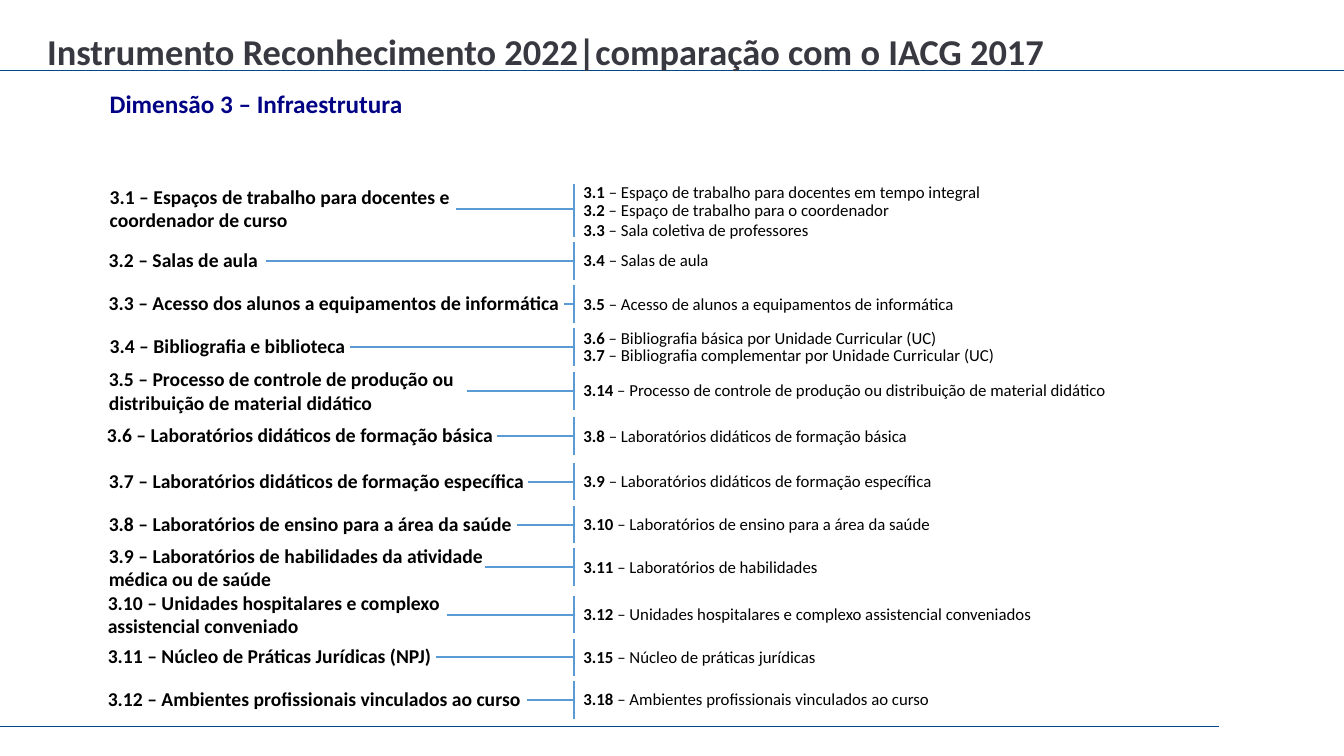
import pptx
import pptx.dml.color
import pptx.enum.shapes
import pptx.enum.text
import pptx.oxml
import pptx.util
from pptx.util import Pt

TITLE = "Instrumento Reconhecimento 2022|comparação com o IACG 2017"
DIMENSION = "Dimensão 3 – Infraestrutura"

# Row: centre y, label x, label width, label lines, stem start x, label,
# then the matching 2017 indicators as (number, name, width)
ROWS = [
    (149, 71.3, 291, 2, 325.4, "3.1 – Espaços de trabalho para docentes e coordenador de curso",
     [("3.1", "Espaço de trabalho para docentes em tempo integral", 301),
      ("3.2", "Espaço de trabalho para o coordenador", 238),
      ("3.3", "Sala coletiva de professores", 180)]),
    (186.4, 70.6, 336.2, 1, 190, "3.2 – Salas de aula",
     [("3.4", "Salas de aula", 294.5)]),
    (217.3, 70.6, 336.2, 1, 403.2, "3.3 – Acesso dos alunos a equipamentos de informática",
     [("3.5", "Acesso de alunos a equipamentos de informática", 294.5)]),
    (247.8, 71.3, 186, 1, 249.8, "3.4 – Bibliografia e biblioteca",
     [("3.6", "Bibliografia básica por Unidade Curricular (UC)", 271),
      ("3.7", "Bibliografia complementar por Unidade Curricular (UC)", 313)]),
    (279.4, 70.6, 315.4, 2, 333.4,
     "3.5 – Processo de controle de produção ou distribuição de material didático",
     [("3.14", "Processo de controle de produção ou distribuição de material didático", 460)]),
    (311.6, 69.3, 294, 1, 355, "3.6 – Laboratórios didáticos de formação básica",
     [("3.8", "Laboratórios didáticos de formação básica", 293.8)]),
    (344, 70.6, 315, 1, 377.3, "3.7 – Laboratórios didáticos de formação específica",
     [("3.9", "Laboratórios didáticos de formação específica", 265)]),
    (374.7, 70.6, 311.5, 1, 369.4, "3.8 – Laboratórios de ensino para a área da saúde",
     [("3.10", "Laboratórios de ensino para a área da saúde", 265)]),
    (405.2, 70.6, 314, 2, 346.3,
     "3.9 – Laboratórios de habilidades da atividade médica ou de saúde",
     [("3.11", "Laboratórios de habilidades", 265)]),
    (439, 69.9, 313.2, 2, 319,
     "3.10 – Unidades hospitalares e complexo assistencial conveniado",
     [("3.12", "Unidades hospitalares e complexo assistencial conveniados", 356.4)]),
    (469.5, 69.9, 250, 1, 311.8, "3.11 – Núcleo de Práticas Jurídicas (NPJ)",
     [("3.15", "Núcleo de práticas jurídicas", 265)]),
    (500, 69.9, 314, 1, 376.6, "3.12 – Ambientes profissionais vinculados ao curso",
     [("3.18", "Ambientes profissionais vinculados ao curso", 265)]),
]

# Layout rules
BRACKET_X, INDICATOR_X = 410, 409.7
LABEL_HEIGHT = {1: 24.4, 2: 41}
LABEL_SHIFT = {1: -0.7, 2: 0}
BRACKET_SPAN = {1: (-13.4, 13.4), 2: (-13.4, 13.4), 3: (-17.2, 20.2)}
INDICATOR_SHIFTS = {1: [-0.5], 2: [-6.6, 5.7], 3: [-11.5, 0.8, 15.2]}
INDICATOR_HEIGHT = 21.8

# Formats
HEADING = {"size": Pt(26), "bold": True, "color": "383840"}
SUBHEADING = {"size": Pt(18), "bold": True, "color": "020284"}
LABEL = {"size": Pt(14), "bold": True, "color": "000000"}
NUMBER = {"size": Pt(12), "bold": True, "color": "000000"}
NAME = {"size": Pt(12), "bold": False, "color": "000000"}
RULE, BRACKET = ("044785", 0.5), ("5B9BD5", 1.5)

deck = pptx.Presentation()
deck.slide_width, deck.slide_height = Pt(960), Pt(540)
slide = deck.slides.add_slide(deck.slide_layouts[6])


def paint(target, color):
    target.rgb = pptx.dml.color.RGBColor.from_string(color)


def add_text(x, y, width, height, *runs):
    box = slide.shapes.add_textbox(Pt(x), Pt(y), Pt(width), Pt(height))
    frame = box.text_frame
    frame.word_wrap = True
    frame.vertical_anchor = pptx.enum.text.MSO_ANCHOR.TOP
    paragraph = frame.paragraphs[0]
    for wording, style in runs:
        run = paragraph.add_run()
        run.text = wording
        run.font.name = "Calibri"
        for key, value in style.items():
            if key == "color":
                paint(run.font.color, value)
            else:
                setattr(run.font, key, value)
    return paragraph


def add_line(x1, y1, x2, y2, style):
    color, weight = style
    line = slide.shapes.add_connector(
        pptx.enum.shapes.MSO_CONNECTOR.STRAIGHT, Pt(x1), Pt(y1), Pt(x2), Pt(y2))
    paint(line.line.color, color)
    line.line.width = Pt(weight)
    properties = line._element.spPr
    properties.append(properties.makeelement(pptx.oxml.ns.qn("a:effectLst"), {}))


# Page rules and headings
add_line(0, 519.1, 870.5, 519.1, RULE)
add_line(0, 50.4, 967.7, 50.4, RULE)
title = add_text(26.6, 20.9, 745.9, 25.9, (TITLE, HEADING))
title.line_spacing = 0.9
add_text(71.3, 59.8, 227, 28.8, (DIMENSION, SUBHEADING))

# Comparison rows: label, stem, bracket, 2017 indicators
for center, label_x, width, lines, stem_x, label, indicators in ROWS:
    height, count = LABEL_HEIGHT[lines], len(indicators)
    add_text(label_x, center + LABEL_SHIFT[lines] - height / 2, width, height, (label, LABEL))
    add_line(stem_x, center, BRACKET_X, center, BRACKET)
    above, below = BRACKET_SPAN[count]
    add_line(BRACKET_X, center + above, BRACKET_X, center + below, BRACKET)
    for shift, (number, name, name_width) in zip(INDICATOR_SHIFTS[count], indicators):
        add_text(INDICATOR_X, center + shift - INDICATOR_HEIGHT / 2, name_width,
                 INDICATOR_HEIGHT, (number, NUMBER), (f" – {name}", NAME))

deck.save("out.pptx")
